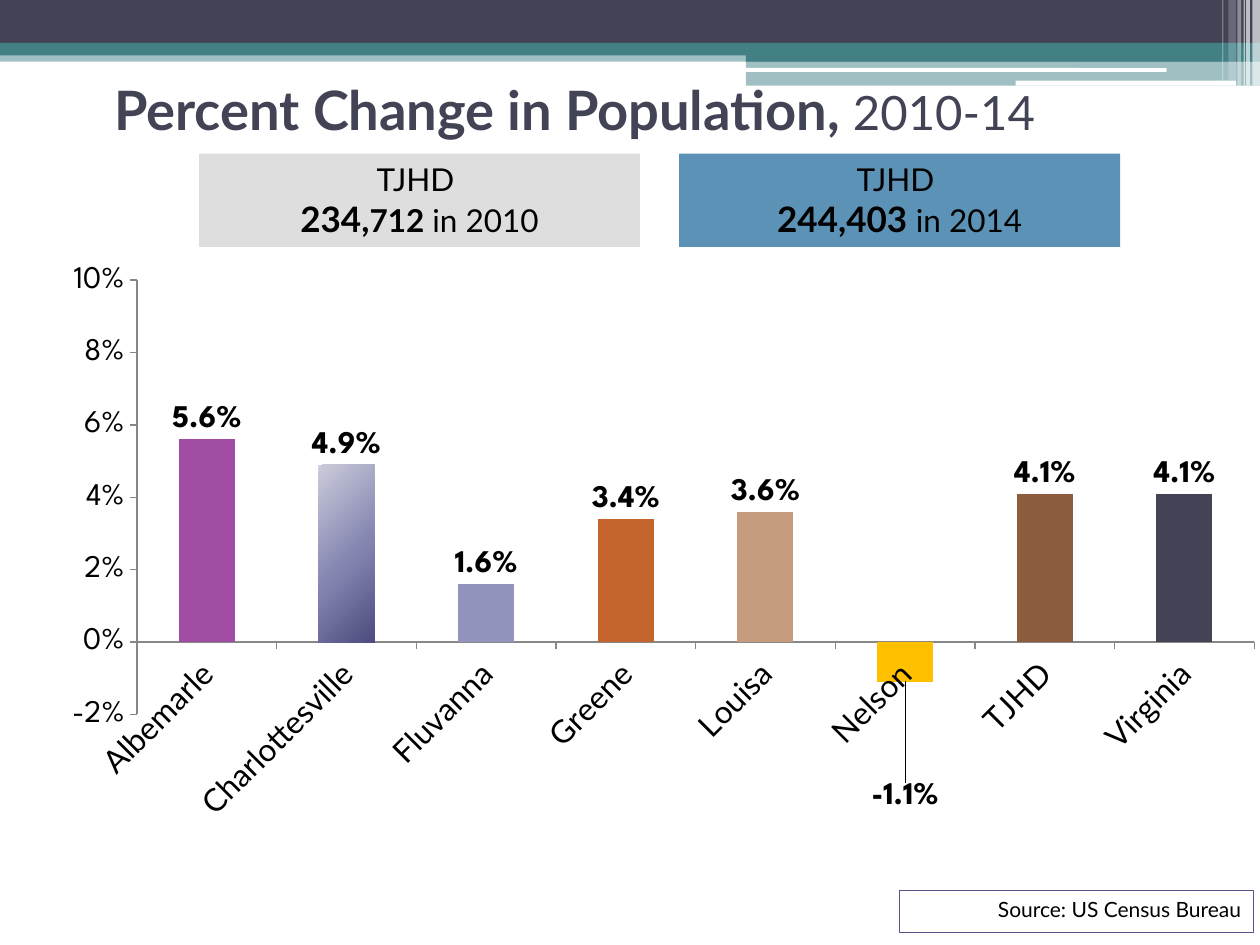
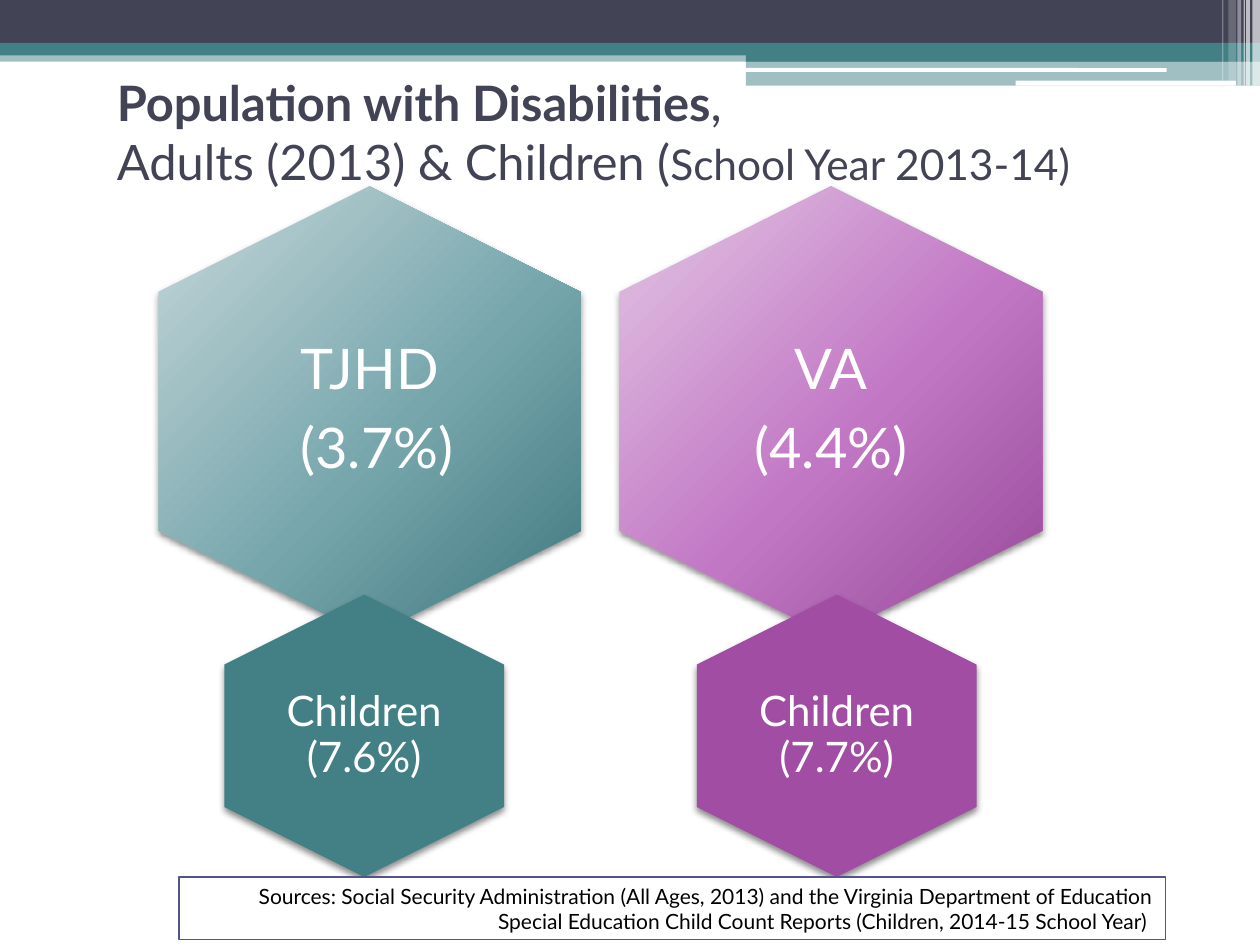
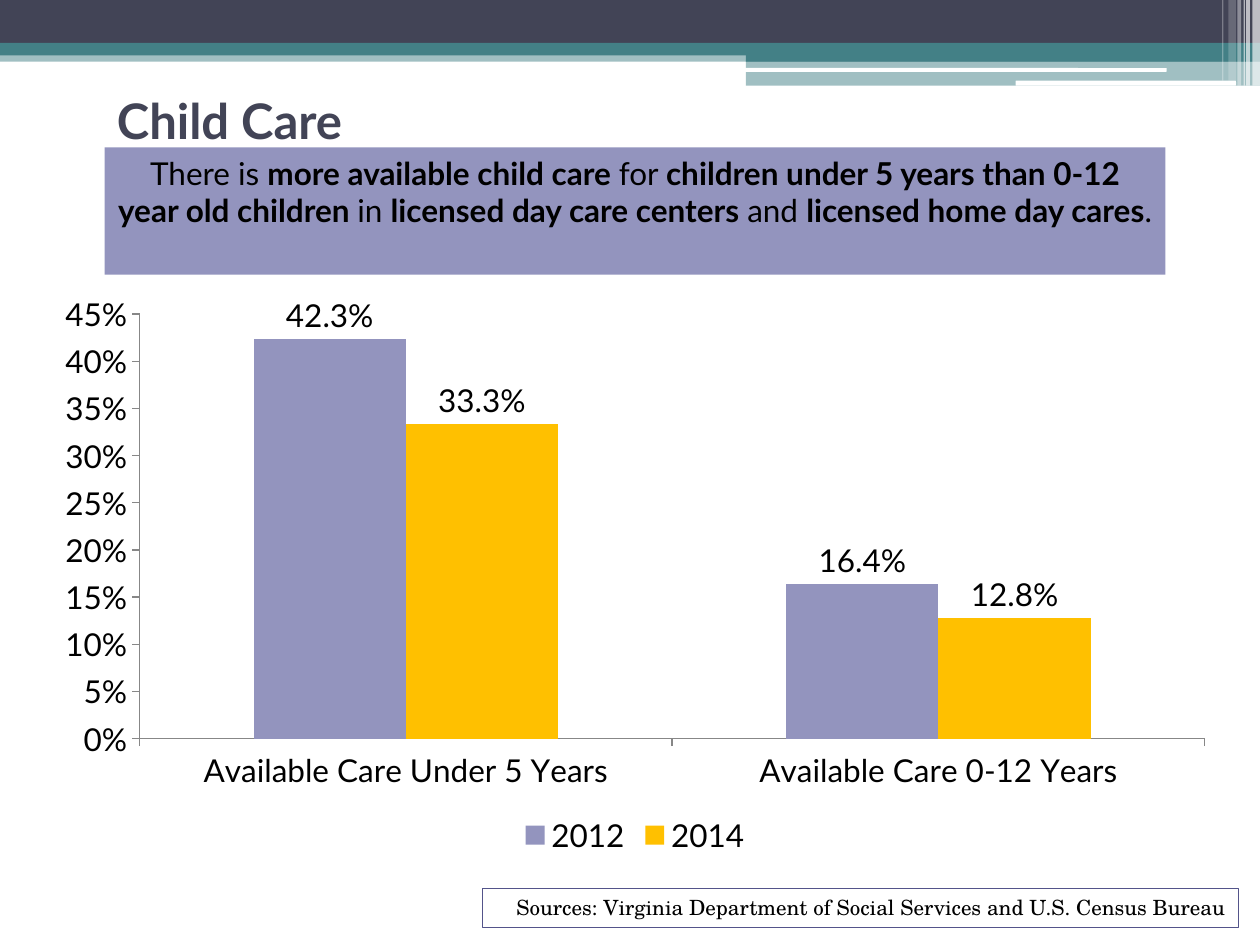
from lxml import etree
from pptx import Presentation
from pptx import util as u
from pptx.chart.data import CategoryChartData
from pptx.dml.color import RGBColor
from pptx.enum import chart as charts, shapes, text
from pptx.oxml import parse_xml
from pptx.oxml.ns import nsdecls, qn

COLORS = {
    "ink": "424456", "teal": "438086", "white": "FFFFFF", "black": "000000",
    "indigo": "53548A", "lavender": "9394BE", "purple": "A04DA3",
    "orange": "C4652D", "tan": "C69B7E", "gold": "FFC000", "brown": "8B5D3D",
    "blue": "5C92B5", "silver": "DEDEDE", "axis": "878787",
}
GRADIENTS = {
    "teal": ((0, "C7D7DA"), (55, "77A7AD"), (100, "3E777D")),
    "purple": ((0, "E2C6E3"), (55, "C277C5"), (100, "954898")),
    "indigo": ((0, "CBCBDB"), (55, "8384B0"), (100, "4C4D7E")),
}
# left, top, width, height, colour, opacity in percent
BANDS = (
    (0, 0.4, 10, 0.09, "teal", 50),
    (0, 0, 10, 0.34, "ink", 100),
    (0, 0.34, 10, 0.1, "teal", 100),
    (5.92, 0.39, 4.08, 0.1, "teal", 100),
    (5.92, 0.48, 4.08, 0.2, "teal", 50),
)
HIGHLIGHTS = ((5.91, 0.54, 3.35, 0.03), (8.06, 0.64, 1.75, 0.04))
# left, width, height, opacity in percent
STRIPES = (
    (9.94, 0.06, 0.68, 65), (9.89, 0.03, 0.68, 65), (9.87, 0.01, 0.68, 60),
    (9.82, 0.03, 0.68, 40), (9.75, 0.06, 0.64, 20), (9.7, 0.01, 0.64, 30),
)
ALIGN = text.PP_ALIGN


def rgb(name):
    return RGBColor.from_string(COLORS[name])


def inches(*lengths):
    return [u.Inches(length) for length in lengths]


def set_gradient(fill, owner, stops, angle):
    """Fill with a linear gradient; angle runs counter-clockwise."""
    fill.gradient()
    fill.gradient_angle = angle
    stop_list = owner.find(".//" + qn("a:gsLst"))
    for stop in list(stop_list):
        stop_list.remove(stop)
    for position, color in stops:
        stop = etree.SubElement(stop_list, qn("a:gs"), pos=str(position * 1000))
        etree.SubElement(stop, qn("a:srgbClr"), val=color)


def manual_layout(**settings):
    items = "".join(f'<c:{key} val="{value}"/>' for key, value in settings.items())
    return parse_xml(f'<c:layout {nsdecls("c")}><c:manualLayout>{items}'
                     "</c:manualLayout></c:layout>")


class Deck:
    font = "Lato"

    def __init__(self):
        self.presentation = Presentation()
        self.presentation.slide_width, self.presentation.slide_height = inches(10, 7.5)
        self.slide = None

    def start(self, title, left, top):
        """Add a slide with the shared bands and its title."""
        self.slide = self.presentation.slides.add_slide(
            self.presentation.slide_layouts[6])
        for *place, color, opacity in BANDS:
            self.shape(place, color, opacity=opacity)
        for place in HIGHLIGHTS:
            self.shape(place, "white", shapes.MSO_SHAPE.ROUNDED_RECTANGLE)
        for x, width, height, opacity in STRIPES:
            self.shape((x, 0, width, height), "white", opacity=opacity)
        self.label((left, top, 8.33, 0.75), title, color="ink", align=ALIGN.LEFT)

    def shape(self, place, color, kind=shapes.MSO_SHAPE.RECTANGLE, opacity=100):
        shape = self.slide.shapes.add_shape(kind, *inches(*place))
        shape.shadow.inherit = False
        shape.line.fill.background()
        shape.fill.solid()
        shape.fill.fore_color.rgb = rgb(color)
        if opacity < 100:
            tint = shape._element.spPr.find(".//" + qn("a:srgbClr"))
            etree.SubElement(tint, qn("a:alpha"), val=str(opacity * 1000))
        return shape

    def fill_text(self, frame, paragraphs, color="black", align=ALIGN.CENTER, font=None):
        """Fill a frame; each paragraph is a list of (text, size, bold) runs."""
        frame.word_wrap = True
        for index, runs in enumerate(paragraphs):
            paragraph = frame.add_paragraph() if index else frame.paragraphs[0]
            paragraph.alignment = align
            for words, size, bold in runs:
                run = paragraph.add_run()
                run.text = words
                run.font.name = font or self.font
                run.font.size = u.Pt(size)
                run.font.bold = bold
                run.font.color.rgb = rgb(color)

    def label(self, place, paragraphs, color, align=ALIGN.CENTER):
        frame = self.slide.shapes.add_textbox(*inches(*place)).text_frame
        frame.vertical_anchor = text.MSO_ANCHOR.MIDDLE
        self.fill_text(frame, paragraphs, color, align)
        return frame

    def panel(self, place, color, paragraphs):
        panel = self.shape(place, color)
        panel.text_frame.vertical_anchor = text.MSO_ANCHOR.TOP
        self.fill_text(panel.text_frame, paragraphs)

    def source(self, place, words, font=None):
        box = self.shape(place, "white")
        box.line.color.rgb = rgb("indigo")
        box.line.width = u.Pt(0.75)
        box.text_frame.vertical_anchor = text.MSO_ANCHOR.TOP
        self.fill_text(box.text_frame, [[(words, 12, False)]],
                       align=ALIGN.RIGHT, font=font)

    def hexagon(self, place, color, label_place, lines, size, graded=False):
        """Add a hexagon standing on its point, with an upright label."""
        hexagon = self.shape(place, color, shapes.MSO_SHAPE.HEXAGON)
        hexagon.rotation = 90
        hexagon.adjustments[0] = 0.25
        if graded:
            set_gradient(hexagon.fill, hexagon._element, GRADIENTS[color], 45)
        effects = hexagon._element.spPr.find(qn("a:effectLst"))
        effects.append(parse_xml(
            f'<a:outerShdw {nsdecls("a")} blurRad="{u.Pt(4)}" dist="{u.Pt(2)}" '
            'dir="5400000" rotWithShape="0"><a:srgbClr val="000000">'
            '<a:alpha val="45000"/></a:srgbClr></a:outerShdw>'))
        frame = self.label(label_place, [[(line, size, False)] for line in lines], "white")
        frame.margin_left = frame.margin_right = 0
        frame.margin_top = frame.margin_bottom = 0
        for paragraph in frame.paragraphs:
            paragraph.line_spacing = 0.9
            paragraph.space_after = u.Pt(round(0.35 * size))

    def style_font(self, font, name=None, bold=False):
        font.name = name or self.font
        font.size = u.Pt(18)
        font.bold = bold
        font.color.rgb = rgb("black")

    def column_chart(self, place, categories, series, limits, step,
                     font=None, bold_labels=False):
        """Add a clustered column chart; series maps a name to (values, colour)."""
        data = CategoryChartData(number_format="0.0%")
        data.categories = categories
        for name, (values, _) in series.items():
            data.add_series(name, values)
        chart = self.slide.shapes.add_chart(
            charts.XL_CHART_TYPE.COLUMN_CLUSTERED, *inches(*place), data).chart
        self.style_font(chart.font, font)
        chart.has_title = chart.has_legend = False

        values_axis = chart.value_axis
        values_axis.minimum_scale, values_axis.maximum_scale = limits
        values_axis.major_unit = step
        values_axis.has_major_gridlines = False
        values_axis.tick_labels.number_format = "0%"
        values_axis.tick_labels.number_format_is_linked = False
        for axis, name in ((values_axis, font), (chart.category_axis, None)):
            axis.major_tick_mark = charts.XL_TICK_MARK.OUTSIDE
            axis.minor_tick_mark = charts.XL_TICK_MARK.NONE
            axis.format.line.color.rgb = rgb("axis")
            self.style_font(axis.tick_labels.font, name)

        plot = chart.plots[0]
        plot.gap_width, plot.overlap = 150, 0
        plot.vary_by_categories = False
        for columns, (_, color) in zip(plot.series, series.values()):
            columns.format.fill.solid()
            columns.format.fill.fore_color.rgb = rgb(color)
            columns.invert_if_negative = False
            labels = columns.data_labels
            labels.show_value = True
            labels.position = charts.XL_LABEL_POSITION.OUTSIDE_END
            labels.number_format = "0.0%"
            labels.number_format_is_linked = False
            self.style_font(labels.font, font, bold_labels)
        return chart


def population_change(deck):
    deck.start([[("Percent Change in Population, ", 31, True), ("2010-14", 27, False)]],
               0.81, 0.49)
    deck.source((7.14, 7.07, 2.81, 0.33), "Source: US Census Bureau")

    growth = {"Albemarle": (0.056, "purple"), "Charlottesville": (0.049, None),
              "Fluvanna": (0.016, "lavender"), "Greene": (0.034, "orange"),
              "Louisa": (0.036, "tan"), "Nelson": (-0.011, "gold"),
              "TJHD": (0.041, "brown"), "Virginia": (0.041, "ink")}
    heading_font = "League Spartan"
    chart = deck.column_chart(
        (0.21, 1.97, 9.75, 5.07), list(growth),
        {"Series 1": ([value for value, _ in growth.values()], "indigo")},
        (-0.02, 0.1), 0.02, heading_font, bold_labels=True)
    area = chart._chartSpace.chart.plotArea
    for layout in area.findall(qn("c:layout")):
        area.remove(layout)
    area.insert(0, manual_layout(layoutTarget="inner", xMode="edge", yMode="edge",
                                 x=0.09, y=0.05, w=0.91, h=0.68))
    slant = chart.category_axis._element.find(".//" + qn("a:bodyPr"))
    slant.set("rot", str(-45 * 60000))
    slant.set("vert", "horz")

    columns = chart.plots[0].series[0]
    for index, (_, color) in enumerate(growth.values()):
        fill = columns.points[index].format.fill
        if color:
            fill.solid()
            fill.fore_color.rgb = rgb(color)
        else:
            set_gradient(fill, columns._element, GRADIENTS["indigo"], 315)
    nelson_label = columns.points[list(growth).index("Nelson")].data_label
    deck.style_font(nelson_label.font, heading_font, bold=True)
    nelson_label.position = charts.XL_LABEL_POSITION.OUTSIDE_END
    label_index = columns._element.find(f".//{qn('c:dLbl')}/{qn('c:idx')}")
    label_index.addnext(manual_layout(x=0, y=0.15))

    deck.panel((5.39, 1.22, 3.5, 0.74), "blue",
               [[("TJHD ", 18, False)],
                [("244,403 ", 20, True), ("in 2014", 18, False)]])
    deck.panel((1.58, 1.22, 3.5, 0.74), "silver",
               [[("TJHD ", 18, False)],
                [("234,", 20, True), ("712", 18, True), (" in 2010", 18, False)]])


def disabilities(deck):
    deck.start([[("Population with Disabilities", 27.9, True), (",", 27.9, False)],
                [("Adults (2013) & Children (", 27.9, False),
                 ("School Year 2013-14)", 24.3, False)]], 0.83, 0.67)
    for left, color, lines in ((1.15, "teal", ("TJHD", " (3.7%)")),
                               (4.81, "purple", ("VA", "(4.4%)"))):
        deck.hexagon((left, 1.59, 3.57, 3.35), color,
                     (left + 0.65, 2.05, 2.27, 2.42), lines, 32, graded=True)
    for left, color, share in ((1.77, "teal", "7.6%"), (5.52, "purple", "7.7%")):
        deck.hexagon((left, 4.73, 2.24, 2.22), color,
                     (left + 0.38, 5.09, 1.48, 1.5), [f"Children ({share})"], 24)
    deck.source((1.42, 6.96, 7.83, 0.5),
                "Sources: Social Security Administration (All Ages, 2013) and the "
                "Virginia Department of Education Special Education Child Count "
                "Reports (Children, 2014-15 School Year) ")


def child_care(deck):
    deck.start([[("Child Care", 28, True)]], 0.83, 0.58)
    deck.source((3.83, 7.05, 6, 0.31),
                "Sources: Virginia Department of Social Services and U.S. Census Bureau",
                "TeX Gyre Schola")
    chart = deck.column_chart(
        (0.33, 2.25, 9.42, 4.58),
        ["Available Care Under 5 Years", "Available Care 0-12 Years"],
        {"2012": ((0.423, 0.164), "lavender"), "2014": ((0.333, 0.128), "gold")},
        (0, 0.45), 0.05)
    chart.has_legend = True
    chart.legend.position = charts.XL_LEGEND_POSITION.BOTTOM
    chart.legend.include_in_layout = False
    deck.style_font(chart.legend.font)
    deck.panel((0.83, 1.17, 8.42, 1.01), "lavender", [[
        ("There is ", 18, False), ("more available child care ", 18, True),
        ("for ", 18, False),
        ("children under 5 years than 0-12 year old children ", 18, True),
        ("in ", 18, False), ("licensed day care centers", 18, True),
        (" and ", 18, False), ("licensed home day cares", 18, True),
        (".", 18, False)]])


def main():
    deck = Deck()
    population_change(deck)
    disabilities(deck)
    child_care(deck)
    deck.presentation.save("out.pptx")


if __name__ == "__main__":
    main()
